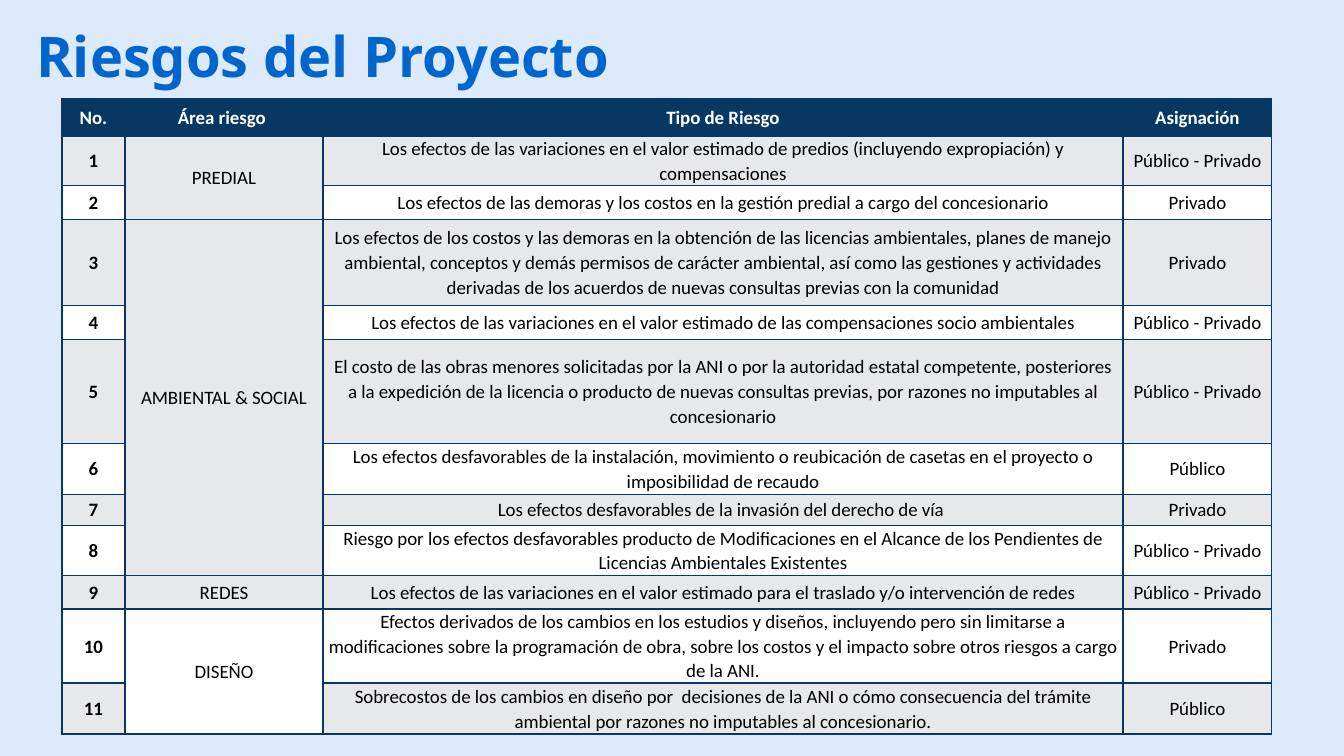
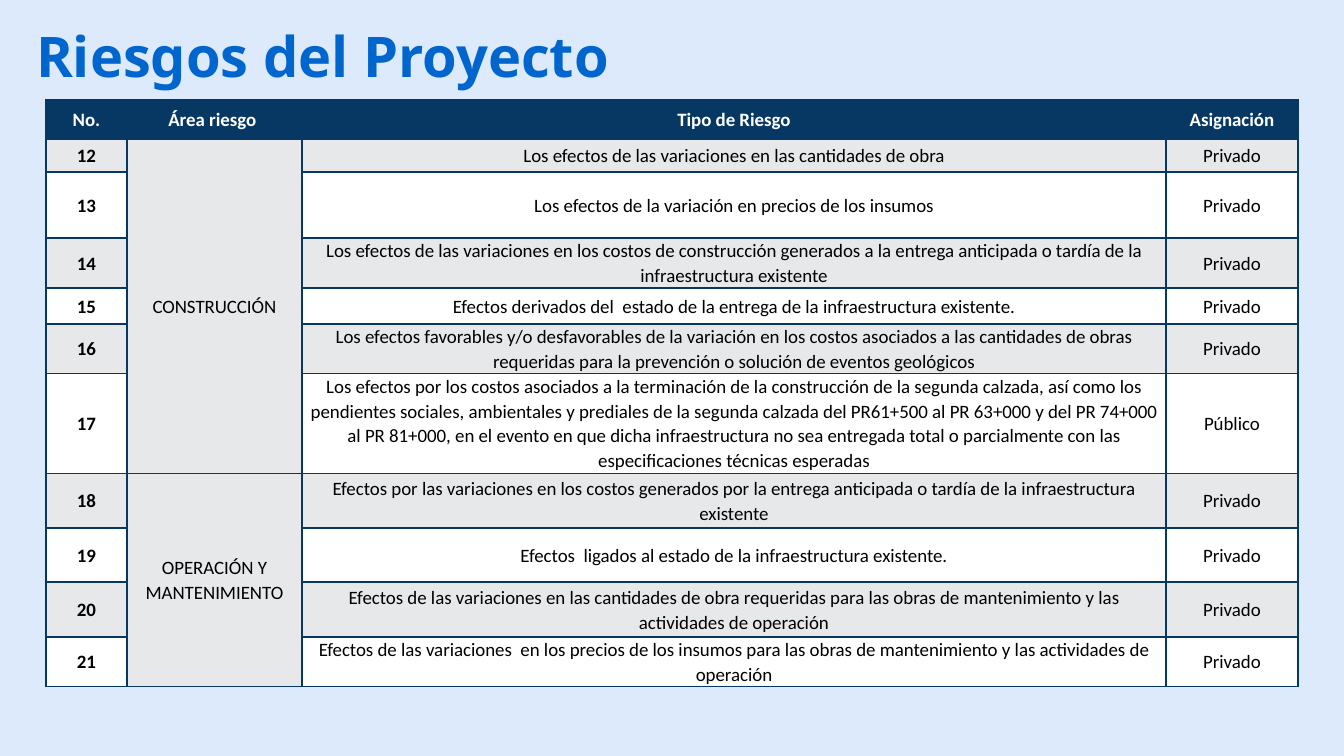
"""Build two slides that list the risks of a road project in tables."""
from lxml import etree
from pptx import Presentation
from pptx.dml.color import RGBColor
from pptx.enum.text import MSO_ANCHOR, MSO_AUTO_SIZE, PP_ALIGN
from pptx.oxml.ns import qn
from pptx.util import Pt

MIDDLE = MSO_ANCHOR.MIDDLE
NO_FIT = MSO_AUTO_SIZE.NONE
LEFT, CENTER = PP_ALIGN.LEFT, PP_ALIGN.CENTER

SKY = RGBColor(0xDC, 0xEA, 0xFB)
BLUE = RGBColor(0x00, 0x66, 0xCD)
NAVY = RGBColor(0x07, 0x37, 0x63)
GRAY = RGBColor(0xE7, 0xE8, 0xEA)
WHITE = RGBColor(0xFF, 0xFF, 0xFF)
BLACK = RGBColor(0x00, 0x00, 0x00)

WIDE, HIGH = 1344, 756
SCALE = 12192000 / WIDE

TITLE = "Riesgos del Proyecto"
HEADS = ["No.", "Área riesgo ", "Tipo de Riesgo", "Asignación"]
BOTH, OPEN, OWN = "Público - Privado", "Público", "Privado"

SLIDES = [
    {
        "left": 62, "top": 99, "first": 1,
        "cols": [63, 198, 800, 149],
        "rows": [37, 49, 34, 86, 34, 104, 51, 31, 50, 34, 74, 51],
        "areas": [
            ("PREDIAL", [
                ("Los efectos de las variaciones en el valor estimado de predios "
                 "(incluyendo expropiación) y compensaciones", BOTH),
                ("Los efectos de las demoras y los costos en la gestión predial "
                 "a cargo del concesionario", OWN),
            ]),
            ("AMBIENTAL & SOCIAL", [
                ("Los efectos de los costos y las demoras en la obtención de las "
                 "licencias ambientales, planes de manejo ambiental, conceptos y "
                 "demás permisos de carácter ambiental, así como las gestiones y "
                 "actividades derivadas de los acuerdos de nuevas consultas "
                 "previas con la comunidad", OWN),
                ("Los efectos de las variaciones en el valor estimado de las "
                 "compensaciones socio ambientales", BOTH),
                ("El costo de las obras menores solicitadas por la ANI o por la "
                 "autoridad estatal competente, posteriores a la expedición de la "
                 "licencia o producto de nuevas consultas previas, por razones no "
                 "imputables al concesionario", BOTH),
                ("Los efectos desfavorables de la instalación, movimiento o "
                 "reubicación de casetas en el proyecto o imposibilidad de "
                 "recaudo", OPEN),
                ("Los efectos desfavorables de la invasión del derecho de vía ", OWN),
                ("Riesgo por los efectos desfavorables producto de Modificaciones "
                 "en el Alcance de los Pendientes de Licencias Ambientales "
                 "Existentes", BOTH),
            ]),
            ("REDES", [
                ("Los efectos de las variaciones en el valor estimado para el "
                 "traslado y/o intervención de redes", BOTH),
            ]),
            ("DISEÑO", [
                ("Efectos derivados de los cambios en los estudios y diseños, "
                 "incluyendo pero sin limitarse a modificaciones sobre la "
                 "programación de obra, sobre los costos y el impacto sobre otros "
                 "riesgos a cargo de la ANI.", OWN),
                ("Sobrecostos de los cambios en diseño por  decisiones de la ANI "
                 "o cómo consecuencia del trámite ambiental por razones no "
                 "imputables al concesionario.", OPEN),
            ]),
        ],
    },
    {
        "left": 46, "top": 100, "first": 12,
        "cols": [81, 175, 864, 132],
        "rows": [39, 33, 66, 50, 36, 49, 100, 55, 54, 55, 49],
        "areas": [
            ("CONSTRUCCIÓN", [
                ("Los efectos de las variaciones en las cantidades de obra", OWN),
                ("Los efectos de la variación en precios de los insumos", OWN),
                ("Los efectos de las variaciones en los costos de construcción "
                 "generados a la entrega anticipada o tardía de la "
                 "infraestructura existente", OWN),
                ("Efectos derivados del  estado de la entrega de la "
                 "infraestructura existente.", OWN),
                ("Los efectos favorables y/o desfavorables de la variación en los "
                 "costos asociados a las cantidades de obras requeridas para la "
                 "prevención o solución de eventos geológicos", OWN),
                ("Los efectos por los costos asociados a la terminación de la "
                 "construcción de la segunda calzada, así como los pendientes "
                 "sociales, ambientales y prediales de la segunda calzada del "
                 "PR61+500 al PR 63+000 y del PR 74+000 al PR 81+000, en el "
                 "evento en que dicha infraestructura no sea entregada total o "
                 "parcialmente con las especificaciones técnicas esperadas", OPEN),
            ]),
            ("OPERACIÓN Y MANTENIMIENTO", [
                ("Efectos por las variaciones en los costos generados por la "
                 "entrega anticipada o tardía de la infraestructura existente", OWN),
                ("Efectos  ligados al estado de la infraestructura existente.", OWN),
                ("Efectos de las variaciones en las cantidades de obra requeridas "
                 "para las obras de mantenimiento y las actividades de "
                 "operación", OWN),
                ("Efectos de las variaciones  en los precios de los insumos para "
                 "las obras de mantenimiento y las actividades de operación", OWN),
            ]),
        ],
    },
]

TITLE_BOX = {"left": 26, "top": 12, "width": 1056, "height": 94}
TITLE_FRAME = {"word_wrap": True, "auto_size": NO_FIT, "vertical_anchor": MIDDLE}
TITLE_PARA = {"alignment": LEFT, "line_spacing": 0.9}
TITLE_FONT = {"name": "Noto Sans", "size": Pt(40), "bold": True}
CELL_BOX = {"margin_left": 5, "margin_right": 5, "margin_top": 0, "margin_bottom": 0}
CELL_PARA = {"alignment": CENTER, "line_spacing": 1.07, "space_after": Pt(8)}
CELL_FONT = {"name": "Calibri", "size": Pt(13.5)}


def px(count):
    return round(count * SCALE)


def put(item, values):
    for name, value in values.items():
        setattr(item, name, value)


deck = Presentation()
put(deck, {"slide_width": px(WIDE), "slide_height": px(HIGH)})
back = deck.slide_master.background.fill
back.solid()
back.fore_color.rgb = SKY

for page in SLIDES:
    slide = deck.slides.add_slide(deck.slide_layouts[5])
    title = slide.shapes.title
    put(title, {name: px(size) for name, size in TITLE_BOX.items()})
    title.text_frame.text = TITLE
    put(title.text_frame, TITLE_FRAME)
    para = title.text_frame.paragraphs[0]
    put(para, TITLE_PARA)
    put(para.font, TITLE_FONT)
    para.font.color.rgb = BLUE

    lines = [HEADS]
    spans = []
    for area, risks in page["areas"]:
        spans.append((len(lines), len(risks)))
        for step, (risk, party) in enumerate(risks):
            number = page["first"] + len(lines) - 1
            lines.append([str(number), "" if step else area, risk, party])

    cols, rows = page["cols"], page["rows"]
    table = slide.shapes.add_table(
        len(rows), len(cols), px(page["left"]), px(page["top"]),
        px(sum(cols)), px(sum(rows))).table
    table.horz_banding = False
    for column, width in zip(table.columns, cols):
        column.width = px(width)
    for row, height in zip(table.rows, rows):
        row.height = px(height)

    for down, line in enumerate(lines):
        shade = NAVY if down == 0 else GRAY if down % 2 else WHITE
        for across, words in enumerate(line):
            cell = table.cell(down, across)
            put(cell, {name: px(size) for name, size in CELL_BOX.items()})
            cell.vertical_anchor = MIDDLE
            props = cell._tc.get_or_add_tcPr()
            for side in ("a:lnL", "a:lnR", "a:lnT", "a:lnB"):
                edge = etree.SubElement(props, qn(side), w=str(Pt(1)))
                paint = etree.SubElement(edge, qn("a:solidFill"))
                etree.SubElement(paint, qn("a:srgbClr"), val=str(NAVY))
            cell.fill.solid()
            cell.fill.fore_color.rgb = shade
            cell.text = words
            para = cell.text_frame.paragraphs[0]
            put(para, CELL_PARA)
            put(para.font, CELL_FONT)
            para.font.bold = down == 0 or across == 0
            para.font.color.rgb = BLACK if down else WHITE

    for start, count in spans:
        if count > 1:
            table.cell(start, 1).merge(table.cell(start + count - 1, 1))

deck.save("out.pptx")
